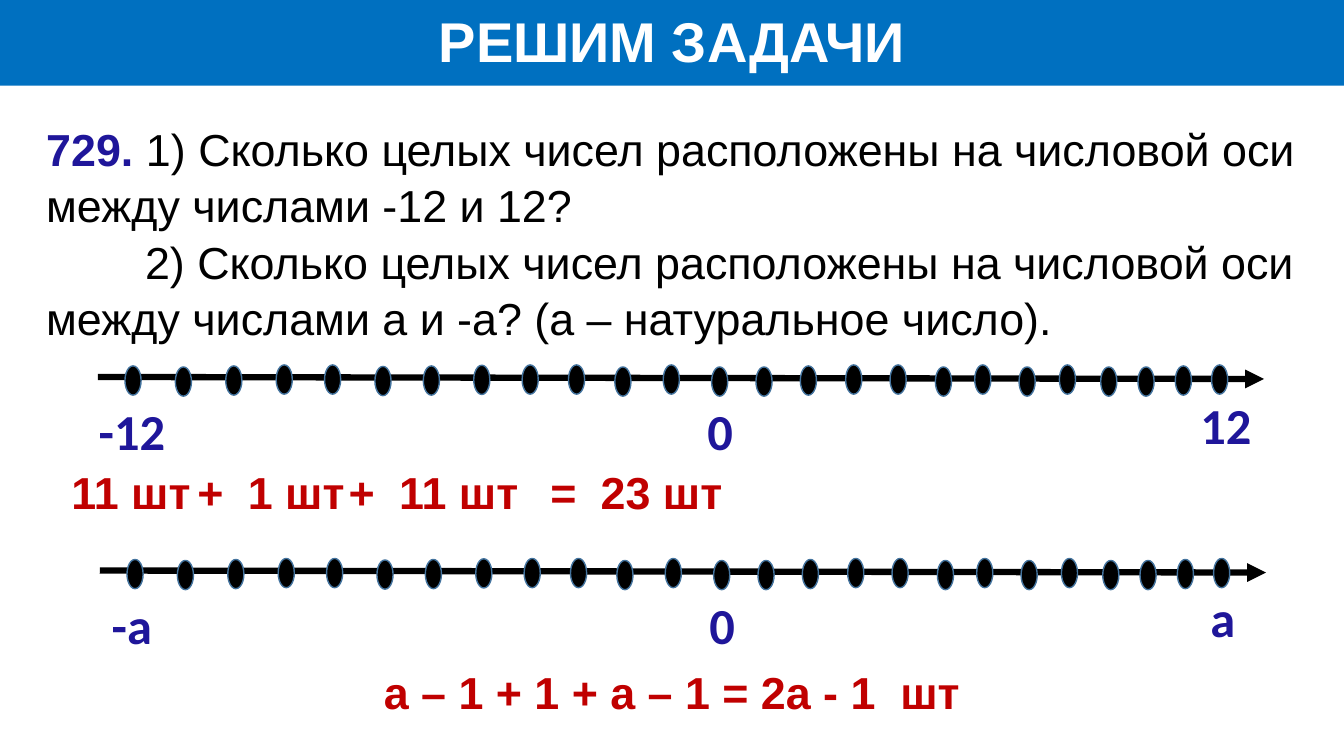
from lxml import etree
from pptx import Presentation
from pptx.dml.color import RGBColor
from pptx.enum.shapes import MSO_CONNECTOR as LINE, MSO_SHAPE as SHAPE
from pptx.enum.text import MSO_ANCHOR as ANCHOR, PP_ALIGN as ALIGN
from pptx.oxml.ns import qn
from pptx.util import Inches, Pt

WIDTH, HEIGHT = 13.33, 7.5
COLS, ROWS = 80, 45
COLORS = {
    "bar": "0070C0",
    "title": "FFFFFF",
    "body": "000000",
    "label": "1F169A",
    "answer": "C00000",
    "axis": "000000",
    "dot_edge": "43739E",
}

# Column and row of each dot, counted from the start of its axis
DOTS = [
    (1.62, -0.66), (4.62, -0.6), (7.62, -0.66), (10.62, -0.72), (13.5, -0.72),
    (16.5, -0.63), (19.38, -0.66), (22.38, -0.7), (25.26, -0.72), (28.02, -0.72),
    (30.78, -0.6), (33.66, -0.72), (36.54, -0.6), (39.18, -0.6), (41.82, -0.66),
    (44.52, -0.72), (47.16, -0.72), (49.86, -0.6), (52.2, -0.72), (54.84, -0.6),
    (57.24, -0.72), (59.7, -0.6), (61.92, -0.6), (64.14, -0.66), (66.3, -0.72),
]
SUM_PARTS = ["11 шт", "+", "1 шт", "+", "11 шт", "=", "23 шт"]
SUM_TABS = [2.65, 4.64, 6.82, 7.95, 9.99, 10.87]


class Board:
    def __init__(self, prs):
        self.s = prs.slides.add_slide(prs.slide_layouts[6])
        self.col = prs.slide_width / COLS
        self.row = prs.slide_height / ROWS

    def grid(self, *cells):
        """Turn alternating columns and rows into slide lengths."""
        return [round(n * (self.row if i % 2 else self.col))
                for i, n in enumerate(cells)]

    def color(self, name):
        return RGBColor.from_string(COLORS[name])

    def style(self, r, size, color, font="Arial", bold=True):
        r.font.name = font
        r.font.size = Pt(size)
        r.font.bold = bold
        r.font.color.rgb = self.color(color)

    def shape(self, kind, box, fill, edge=None):
        sp = self.s.shapes.add_shape(kind, *self.grid(*box))
        sp.shadow.inherit = False
        sp.fill.solid()
        sp.fill.fore_color.rgb = self.color(fill)
        if edge:
            sp.line.color.rgb = self.color(edge)
            sp.line.width = Pt(1)
        else:
            sp.line.fill.background()
        return sp

    def title_bar(self, text):
        sp = self.shape(SHAPE.RECTANGLE, (0, 0, COLS, 5.1), "bar")
        tf = sp.text_frame
        tf.margin_left = tf.margin_right = tf.margin_bottom = 0
        tf.margin_top = Inches(0.06)
        tf.vertical_anchor = ANCHOR.TOP
        tf.text = text
        p = tf.paragraphs[0]
        p.alignment = ALIGN.CENTER
        self.style(p.runs[0], 40, "title")

    def text(self, box, text, size, color, **look):
        tf = self.s.shapes.add_textbox(*self.grid(*box)).text_frame
        tf.word_wrap = True
        tf.text = text
        for p in tf.paragraphs:
            for r in p.runs:
                self.style(r, size, color, **look)
        return tf

    def indent(self, p, inches):
        pPr = p._p.get_or_add_pPr()
        pPr.set("marL", "0")
        pPr.set("indent", str(Inches(inches)))
        return pPr

    def tabbed_text(self, box, parts, tabs, first, size, color):
        """Write the parts on one line, each at its own tab stop."""
        tf = self.text(box, "\t".join(parts), size, color)
        pPr = self.indent(tf.paragraphs[0], first)
        stops = etree.SubElement(pPr, qn("a:tabLst"))
        for tab in tabs:
            etree.SubElement(stops, qn("a:tab"), pos=str(Inches(tab)), algn="l")

    def arrow(self, x1, y1, x2, y2):
        c = self.s.shapes.add_connector(LINE.STRAIGHT, *self.grid(x1, y1, x2, y2))
        c.line.color.rgb = self.color("axis")
        c.line.width = Pt(4.5)
        etree.SubElement(c.line._get_or_add_ln(), qn("a:tailEnd"), type="triangle")
        etree.SubElement(c._element.spPr, qn("a:effectLst"))

    def number_line(self, x, y, labels):
        """Draw an axis with its dots; labels are (text, column, row, width)."""
        self.arrow(x, y, x + 69.42, y + 0.12)
        for dx, dy in DOTS:
            self.shape(SHAPE.OVAL, (x + dx, y + dy, 0.96, 1.74), "axis", "dot_edge")
        for text, dx, dy, width in labels:
            self.text((x + dx, y + dy, width, 4.26), text, 36, "label",
                      font="Calibri")


def main():
    prs = Presentation()
    prs.slide_width, prs.slide_height = Inches(WIDTH), Inches(HEIGHT)
    board = Board(prs)
    board.title_bar("РЕШИМ ЗАДАЧИ")

    tf = board.text((2.16, 6.78, 76.68, 13.56), "729. ", 32, "label")
    first, second = tf.paragraphs[0], tf.add_paragraph()
    r = first.add_run()
    r.text = ("1) Сколько целых чисел расположены на числовой оси "
              "между числами -12 и 12?")
    second.text = ("2) Сколько целых чисел расположены на числовой оси "
                   "между числами а и -а? (а – натуральное число).")
    for r in (r, second.runs[0]):
        board.style(r, 32, "body", bold=False)
    for p in tf.paragraphs:
        p.line_spacing = 1.05
    board.indent(second, 0.98)

    zero = ("0", 35.7, 1.08, 2.88)
    board.number_line(5.82, 22.44, [
        ("-12", -0.54, 1.08, 6.6), zero, ("12", 65.04, 0.72, 4.32)])
    board.number_line(5.94, 33.96, [
        ("-а", 0.12, 1.08, 4.62), zero, ("а", 65.52, 0.72, 3.72)])

    board.tabbed_text((2.16, 27.36, 74.7, 3.84), SUM_PARTS, SUM_TABS, 0.25,
                      32, "answer")
    board.text((22.26, 39.3, 36.66, 3.84), "а – 1 + 1 + а – 1 = 2а - 1  шт",
               32, "answer")
    prs.save("out.pptx")


if __name__ == "__main__":
    main()
